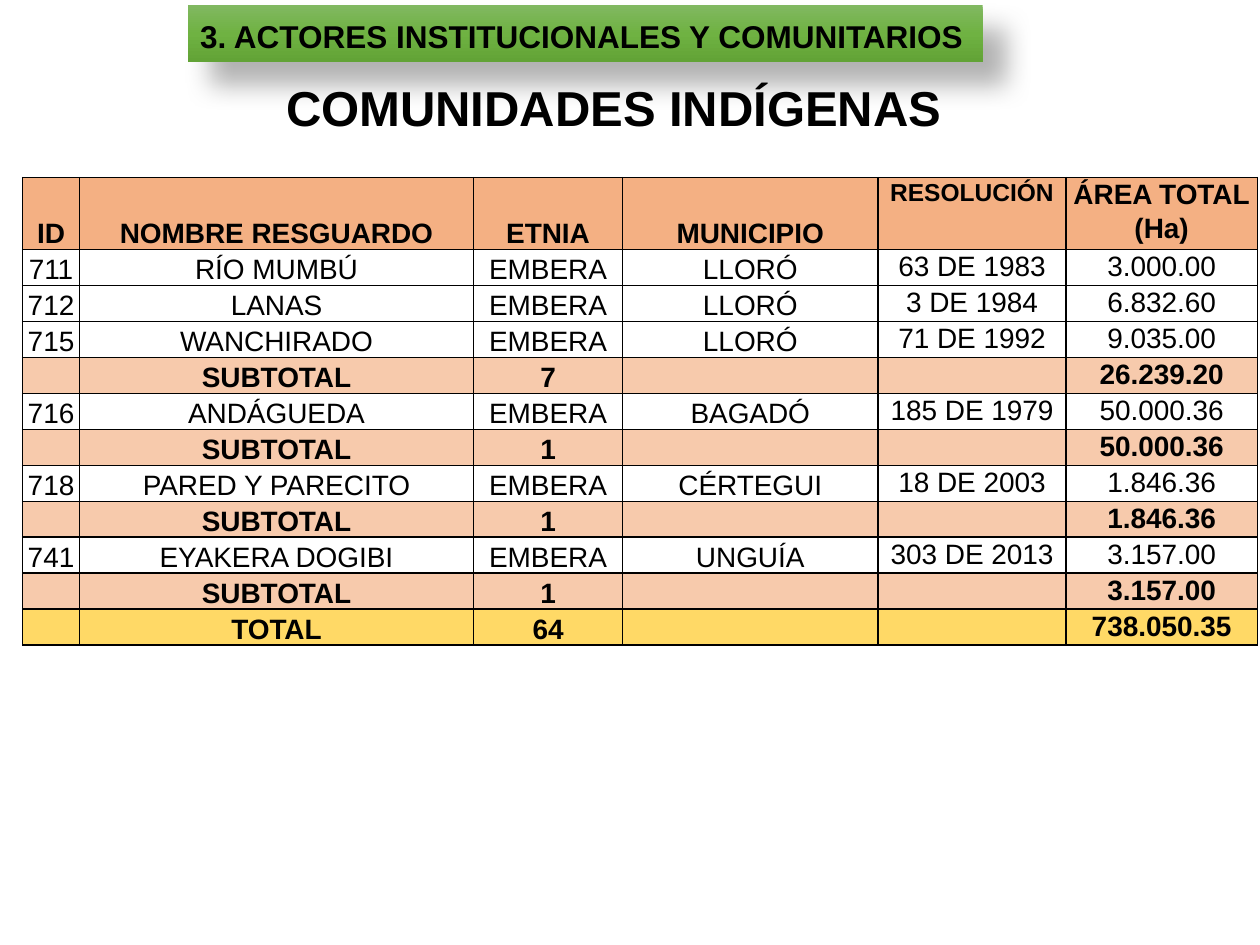
"""Builds the slide on indigenous communities and their reserves."""
import lxml.etree
import pptx
import pptx.dml.color
import pptx.enum.shapes
import pptx.enum.text
import pptx.oxml.ns
import pptx.util

Inches = pptx.util.Inches
Pt = pptx.util.Pt
Align = pptx.enum.text.PP_ALIGN
Anchor = pptx.enum.text.MSO_ANCHOR

COLUMN_WIDTHS = [0.45, 3.13, 1.18, 2.03, 1.49, 1.52]
HEADER_HEIGHT = 0.57
TABLE_HEIGHT = 3.71
HEADER_FILL, SUBTOTAL_FILL, TOTAL_FILL = "F4B083", "F7CAAC", "FFD966"

HEADER = ["ID", "NOMBRE RESGUARDO", "ETNIA", "MUNICIPIO", "RESOLUCIÓN", "ÁREA TOTAL\n(Ha)"]
GROUPS = [
    ("LLORÓ", [("711", "RÍO MUMBÚ", "63 DE 1983", "3.000.00"),
               ("712", "LANAS", "3 DE 1984", "6.832.60"),
               ("715", "WANCHIRADO", "71 DE 1992", "9.035.00")], "7", "26.239.20"),
    ("BAGADÓ", [("716", "ANDÁGUEDA", "185 DE 1979", "50.000.36")], "1", "50.000.36"),
    ("CÉRTEGUI", [("718", "PARED Y PARECITO", "18 DE 2003", "1.846.36")], "1", "1.846.36"),
    ("UNGUÍA", [("741", "EYAKERA DOGIBI", "303 DE 2013", "3.157.00")], "1", "3.157.00"),
]


def color(value):
    return pptx.dml.color.RGBColor.from_string(value)


def add_element(parent, tag, **attributes):
    element = lxml.etree.SubElement(parent, pptx.oxml.ns.qn(tag))
    for name, value in attributes.items():
        element.set(name, str(value))
    return element


def reserve_rows():
    rows = [(HEADER, HEADER_FILL, True)]
    for town, reserves, count, area in GROUPS:
        for number, name, resolution, size in reserves:
            rows.append(([number, name, "EMBERA", town, resolution, size], None, False))
        rows.append((["", "SUBTOTAL", count, "", "", area], SUBTOTAL_FILL, True))
    rows.append((["", "TOTAL", "64", "", "", "738.050.35"], TOTAL_FILL, True))
    return rows


class SlideBuilder:
    font = "Arial"
    ink = "000000"

    def __init__(self, deck):
        self.page = deck.slides.add_slide(deck.slide_layouts[6])

    def add_span(self, paragraph, text, size, bold, align, spacing=None):
        paragraph.alignment = align
        paragraph.line_spacing = spacing
        span = paragraph.add_run()
        span.text = text
        span.font.name = self.font
        span.font.size = Pt(size)
        span.font.bold = bold
        span.font.color.rgb = color(self.ink)

    def banner(self, text, left, top, width, height):
        box = self.page.shapes.add_shape(
            pptx.enum.shapes.MSO_SHAPE.RECTANGLE,
            Inches(left), Inches(top), Inches(width), Inches(height))
        box.line.fill.background()
        self.gradient(box, ["81B861", "6FB242", "62A336"])
        self.shadow(box, blur=15, distance=18, angle=45, opacity=30)
        frame = box.text_frame
        frame.word_wrap = True
        frame.auto_size = pptx.enum.text.MSO_AUTO_SIZE.SHAPE_TO_FIT_TEXT
        frame.vertical_anchor = Anchor.TOP
        self.add_span(frame.paragraphs[0], text, 18, True, Align.JUSTIFY, 1.15)

    def gradient(self, box, shades):
        box.fill.gradient()
        box.fill.gradient_angle = 270
        stop_list = box._element.spPr.find(".//" + pptx.oxml.ns.qn("a:gsLst"))
        for stop in list(stop_list):
            stop_list.remove(stop)
        for index, shade in enumerate(shades):
            stop = add_element(stop_list, "a:gs", pos=index * 100000 // (len(shades) - 1))
            add_element(stop, "a:srgbClr", val=shade)

    def shadow(self, box, blur, distance, angle, opacity):
        box.shadow.inherit = False
        effects = box._element.spPr.find(pptx.oxml.ns.qn("a:effectLst"))
        outer = add_element(effects, "a:outerShdw", blurRad=Pt(blur), dist=Pt(distance),
                            dir=angle * 60000, algn="tl", rotWithShape=0)
        shade = add_element(outer, "a:srgbClr", val=self.ink)
        add_element(shade, "a:alpha", val=opacity * 1000)

    def title(self, text, left, top, width, height):
        box = self.page.shapes.add_textbox(
            Inches(left), Inches(top), Inches(width), Inches(height))
        box.text_frame.word_wrap = True
        self.add_span(box.text_frame.paragraphs[0], text, 28, True, Align.CENTER)

    def table(self, rows, left, top):
        table = self.page.shapes.add_table(
            len(rows), len(COLUMN_WIDTHS), Inches(left), Inches(top),
            Inches(sum(COLUMN_WIDTHS)), Inches(TABLE_HEIGHT)).table
        table.first_row = table.horz_banding = False
        for column, width in zip(table.columns, COLUMN_WIDTHS):
            column.width = Inches(width)
        body_height = (TABLE_HEIGHT - HEADER_HEIGHT) / (len(rows) - 1)
        for index, (texts, fill, bold) in enumerate(rows):
            table.rows[index].height = Inches(body_height if index else HEADER_HEIGHT)
            for place, text in enumerate(texts):
                cell = table.cell(index, place)
                cell.vertical_anchor = Anchor.BOTTOM if place < 4 else Anchor.TOP
                self.cell(cell, text, fill, bold)

    def cell(self, cell, text, fill, bold):
        cell.margin_left = cell.margin_right = Inches(0.02)
        cell.margin_top = cell.margin_bottom = 0
        properties = cell._tc.get_or_add_tcPr()
        for side in ("a:lnL", "a:lnR", "a:lnT", "a:lnB"):
            line = add_element(properties, side, w=Pt(1))
            add_element(add_element(line, "a:solidFill"), "a:srgbClr", val=self.ink)
        if fill:
            cell.fill.solid()
            cell.fill.fore_color.rgb = color(fill)
        else:
            cell.fill.background()
        frame = cell.text_frame
        if not text:
            add_element(frame.paragraphs[0]._p, "a:endParaRPr", sz=1600)
            return
        size = 14 if text == "RESOLUCIÓN" else 16
        for index, line in enumerate(text.split("\n")):
            paragraph = frame.add_paragraph() if index else frame.paragraphs[0]
            self.add_span(paragraph, line, size, bold, Align.CENTER, 1.07)


def main():
    deck = pptx.Presentation()
    deck.slide_width = Inches(10)
    deck.slide_height = Inches(7.5)
    builder = SlideBuilder(deck)
    builder.banner("3. ACTORES INSTITUCIONALES Y COMUNITARIOS", 1.49, 0.04, 6.31, 0.45)
    builder.title("COMUNIDADES INDÍGENAS", 1.96, 0.57, 5.82, 1.04)
    builder.table(reserve_rows(), 0.18, 1.41)
    deck.save("out.pptx")


if __name__ == "__main__":
    main()
